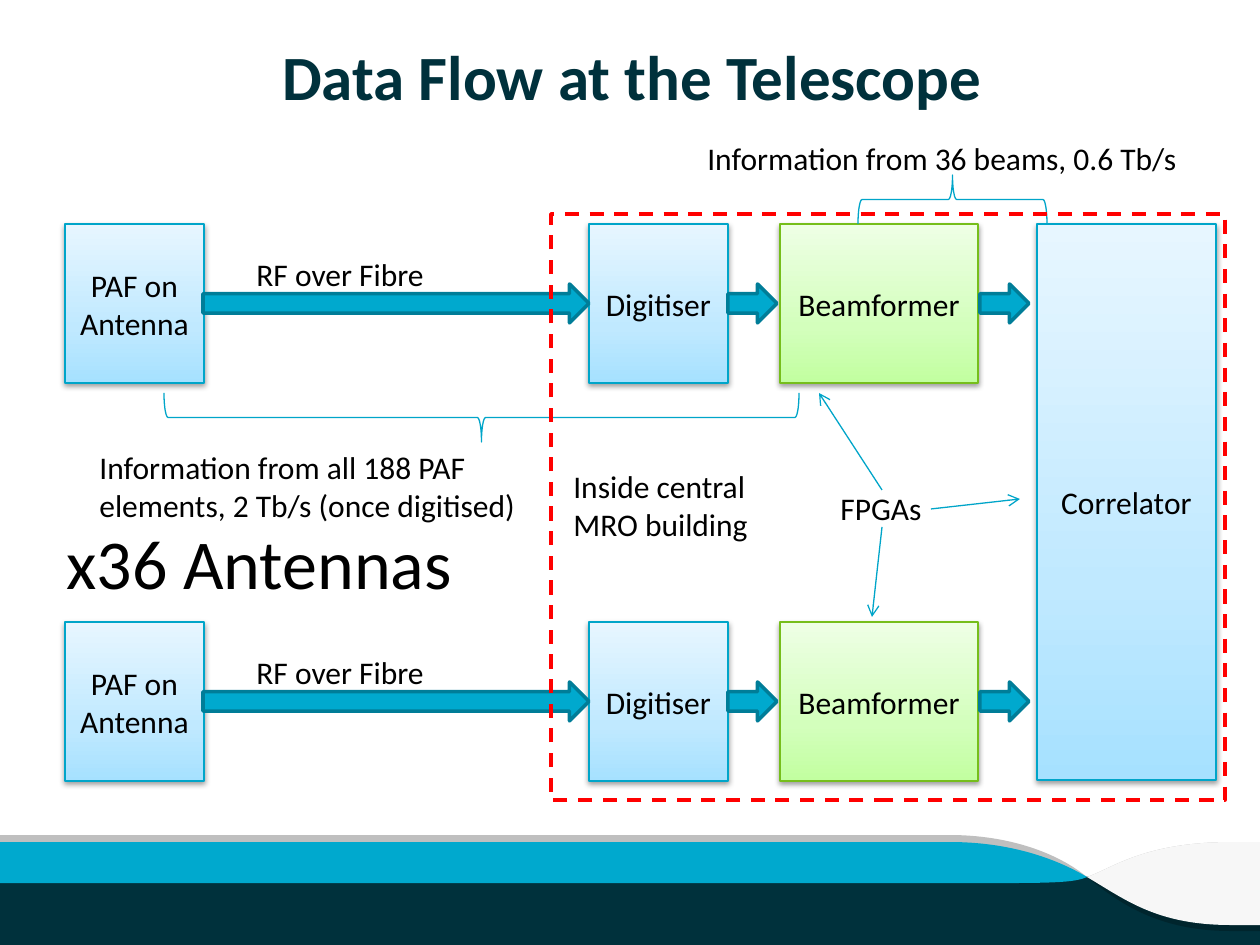
from copy import deepcopy
from dataclasses import dataclass

from lxml.etree import SubElement
from pptx import Presentation
from pptx.dml.color import RGBColor
from pptx.enum.dml import MSO_LINE
from pptx.enum.shapes import MSO_CONNECTOR, MSO_SHAPE
from pptx.enum.text import MSO_ANCHOR, MSO_AUTO_SIZE, PP_ALIGN
from pptx.oxml.ns import qn
from pptx.util import Pt

PX = 914400 / 126  # EMU in one px


@dataclass(frozen=True)
class Theme:
    font: str = "Calibri"
    title: int = 36
    big: int = 40
    body: int = 18
    thin: float = 0.75
    thick: float = 2
    text: str = "000000"
    navy: str = "00313C"
    deep: str = "00252D"
    cyan: str = "00A9CE"
    cyan_line: str = "00A5C9"
    cyan_edge: str = "007D98"
    green_line: str = "76BE1B"
    red: str = "FF0000"
    grey: str = "BFBFBF"
    pale: str = "F7F7F7"
    blue_stops: tuple = ((0, "A6E1FF"), (0.35, "C0E9FF"), (1, "E7F6FF"))
    green_stops: tuple = ((0, "C2FFA0"), (0.35, "D3FFBC"), (1, "EEFFE5"))


T = Theme()


def emu(*lengths):
    return [round(v * PX) for v in lengths]


def rgb(color):
    return RGBColor.from_string(color)


def style(sp, fill=None, line=None, width=T.thin):
    sp.shadow.inherit = False
    if fill:
        sp.fill.solid()
        sp.fill.fore_color.rgb = rgb(fill)
    else:
        sp.fill.background()
    if line:
        sp.line.color.rgb = rgb(line)
        sp.line.width = Pt(width)
    else:
        sp.line.fill.background()


def write(tf, text, size=T.body, color=T.text, bold=False, align=PP_ALIGN.LEFT):
    tf.text = text
    for p in tf.paragraphs:
        p.alignment = align
        for r in p.runs:
            r.font.name, r.font.size, r.font.bold = T.font, Pt(size), bold
            r.font.color.rgb = rgb(color)


def label(s, x, y, w, h, text, size=T.body, wrap=False):
    tf = s.shapes.add_textbox(*emu(x, y, w, h)).text_frame
    tf.word_wrap = wrap
    tf.auto_size = MSO_AUTO_SIZE.SHAPE_TO_FIT_TEXT
    write(tf, text, size)


def block(s, x, y, w, h, text, stops=T.blue_stops, line=T.cyan_line):
    """Gradient box with a soft shadow and a centred name."""
    sp = s.shapes.add_shape(MSO_SHAPE.RECTANGLE, *emu(x, y, w, h))
    style(sp, line=line)
    sp.fill.gradient()
    sp.fill.gradient_angle = 90
    gs_list = sp._element.spPr.find(qn("a:gradFill")).find(qn("a:gsLst"))
    gs_list.insert(1, deepcopy(gs_list[0]))
    for stop, (position, color) in zip(sp.fill.gradient_stops, stops):
        stop.position = position
        stop.color.rgb = rgb(color)
    effects = sp._element.spPr.find(qn("a:effectLst"))
    shadow = SubElement(effects, qn("a:outerShdw"), blurRad="40000",
                        dist="20000", dir="5400000", rotWithShape="0")
    black = SubElement(shadow, qn("a:srgbClr"), val="000000")
    SubElement(black, qn("a:alpha"), val="38000")
    tf = sp.text_frame
    tf.word_wrap = True
    tf.vertical_anchor = MSO_ANCHOR.MIDDLE
    write(tf, text, align=PP_ALIGN.CENTER)


def flow_arrow(s, x, y, w, h):
    sp = s.shapes.add_shape(MSO_SHAPE.RIGHT_ARROW, *emu(x, y, w, h))
    style(sp, T.cyan, T.cyan_edge, T.thick)


def brace(s, x, y, w, h, rotation):
    """Horizontal brace: a left brace turned inside the box it covers."""
    left, top = x + (w - h) / 2, y + (h - w) / 2
    sp = s.shapes.add_shape(MSO_SHAPE.LEFT_BRACE, *emu(left, top, h, w))
    sp.rotation = rotation
    style(sp, line=T.cyan_line)


def pointer(s, x1, y1, x2, y2):
    c = s.shapes.add_connector(MSO_CONNECTOR.STRAIGHT, *emu(x1, y1, x2, y2))
    c.line.color.rgb = rgb(T.cyan_line)
    c.line.width = Pt(T.thin)
    SubElement(c.line._get_or_add_ln(), qn("a:tailEnd"), type="arrow")
    SubElement(c._element.spPr, qn("a:effectLst"))


def bend(sp, parts):
    """Join each run of three line segments that stands for a curve."""
    lines = iter(list(sp._element.iter(qn("a:lnTo"))))
    for part in parts:
        segment = next(lines)
        if len(part) == 3:
            segment.tag = qn("a:cubicBezTo")
            for other in (next(lines), next(lines)):
                segment.append(other[0])
                other.getparent().remove(other)


def outline(s, x, y, contours, color):
    """Each contour lists points; a triple of points is a Bezier curve."""
    builder, all_parts = None, []
    for start, *parts in contours:
        all_parts += parts
        points = [start]
        for part in parts:
            points += part if len(part) == 3 else [part]
        first, *rest = [emu(x + px, y + py) for px, py in points]
        if builder is None:
            builder = s.shapes.build_freeform(*first, scale=1.0)
        else:
            builder.move_to(*first)
        builder.add_line_segments(rest, close=False)
    sp = builder.convert_to_shape()
    bend(sp, all_parts)
    style(sp, color)


def footer(s, x, y, w, h):
    cross, tail = (1087, 42), (1002, 48)
    crest = ((1144, 7), (1113, 33), cross)
    closing = ((1058, 48), (1076, 47), cross)
    base = s.shapes.add_shape(MSO_SHAPE.RECTANGLE, *emu(x, y + 42, w, h - 42))
    style(base, T.navy)
    # Grey rim
    outline(s, x, y, [
        [(w, 7), (1232, 7), crest, (w, 42)],
        [(950, 0), (0, 0), (0, 42), cross, ((1058, 18), (1009, 0), (950, 0))],
    ], T.grey)
    # Dark shade
    outline(s, x, y, [
        [cross, (0, 42), (0, 48), tail, closing],
        [(w, 42), cross, ((1118, 67), (1157, 96), (1231, 96)), (w, 96)],
    ], T.deep)
    # Cyan band and pale wave
    outline(s, x, y, [[cross, ((1055, 23), (1009, 7), (950, 7)), (0, 7),
                       (0, 48), tail, closing]], T.cyan)
    outline(s, x, y, [[(1232, 7), crest, ((1126, 65), (1157, 90), (1231, 90)),
                       (w, 90), (w, 7)]], T.pale)


def title(s, x, y, w, h):
    tf = s.shapes.add_textbox(*emu(x, y, w, h)).text_frame
    tf.word_wrap = True
    tf.margin_left = tf.margin_top = tf.margin_right = tf.margin_bottom = 0
    write(tf, "Data Flow at the Telescope", T.title, T.navy, True, PP_ALIGN.CENTER)


def antenna_row(s, x, y, h):
    block(s, x, y, 139, h, "PAF on Antenna")
    block(s, x + 524, y, 139, h, "Digitiser")
    block(s, x + 715, y, 198, h, "Beamformer", T.green_stops, T.green_line)
    for left, w in ((138, 386), (663, 49), (915, 49)):
        flow_arrow(s, x + left, y + (h - 39) / 2, w, 39)
    label(s, x + 179, y + 25, 194, 50, "RF over Fibre")


def data_rates(s, x, y):
    brace(s, x + 109, y + 218, 635, 49, 270)
    label(s, x + 32, y + 267, 446, 89,
          "Information from all 188 PAF\nelements, 2 Tb/s (once digitised)")
    brace(s, x + 803, y, 189, 49, 90)
    label(s, x + 640, y - 42, 529, 50, "Information from 36 beams, 0.6 Tb/s", wrap=True)
    label(s, x - 1, y + 338, 536, 97, "x36 Antennas", T.big, True)


def fpga_note(s, x, y):
    label(s, x, y, 179, 50, "FPGAs", wrap=True)
    for ends in ((54, 7, -9, -90), (54, 44, 44, 134), (103, 26, 192, 16)):
        pointer(s, *(v + o for v, o in zip(ends, (x, y, x, y))))


def building(s, x, y, w, h):
    sp = s.shapes.add_shape(MSO_SHAPE.RECTANGLE, *emu(x, y, w, h))
    style(sp, line=T.red, width=T.thick)
    sp.line.dash_style = MSO_LINE.DASH
    label(s, x + 10, y + 247, 202, 89, "Inside central\nMRO building")


def main():
    prs = Presentation()
    prs.slide_width, prs.slide_height = emu(1260, 945)
    s = prs.slides.add_slide(prs.slide_layouts[6])
    footer(s, 0, 835, 1260, 110)
    title(s, 49, 38, 1166, 117)
    block(s, 1037, 224, 179, 556, "Correlator")
    for y in (224, 622):
        antenna_row(s, 65, y, 159)
    data_rates(s, 55, 175)
    fpga_note(s, 828, 483)
    building(s, 551, 214, 674, 586)
    prs.save("out.pptx")


if __name__ == "__main__":
    main()
